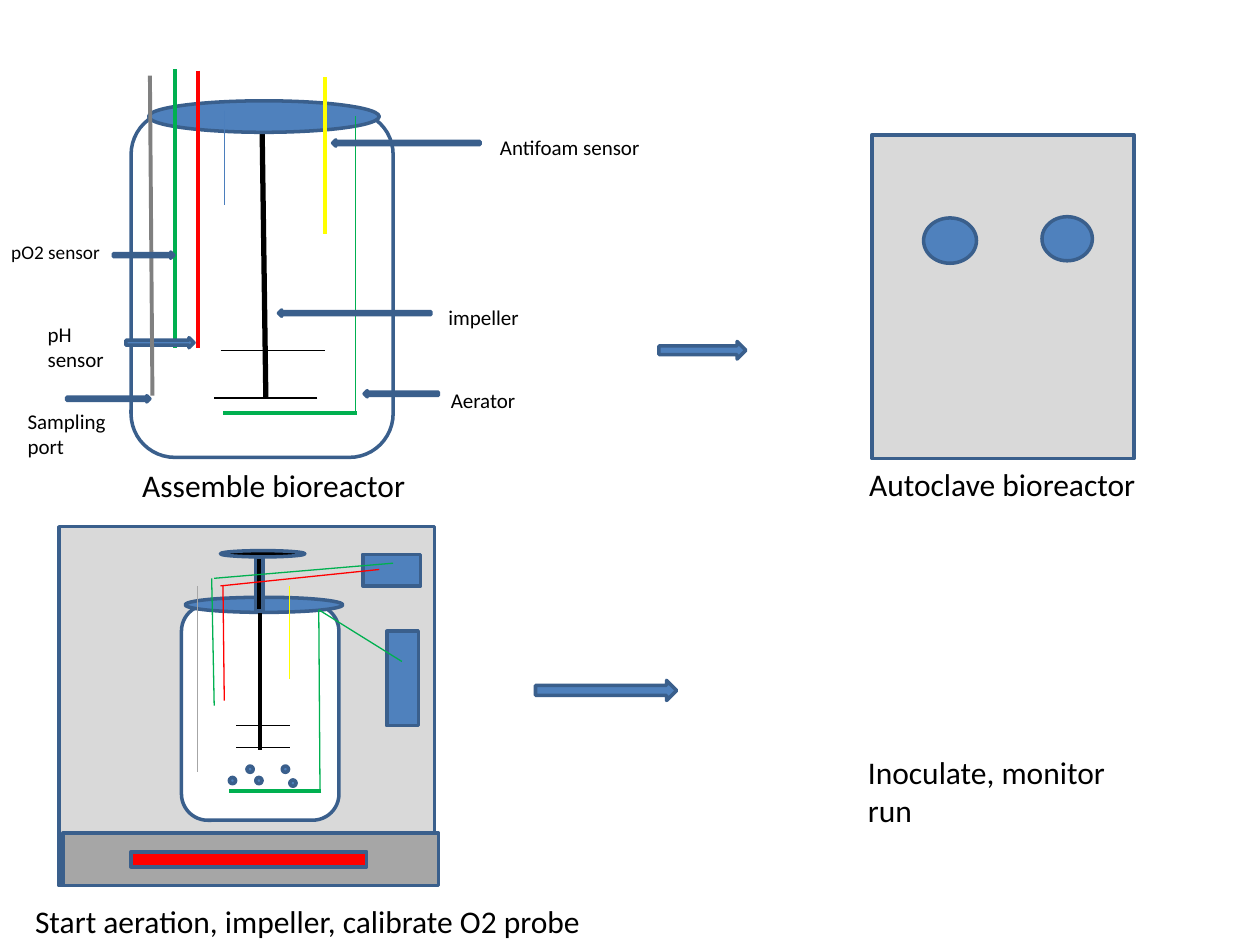
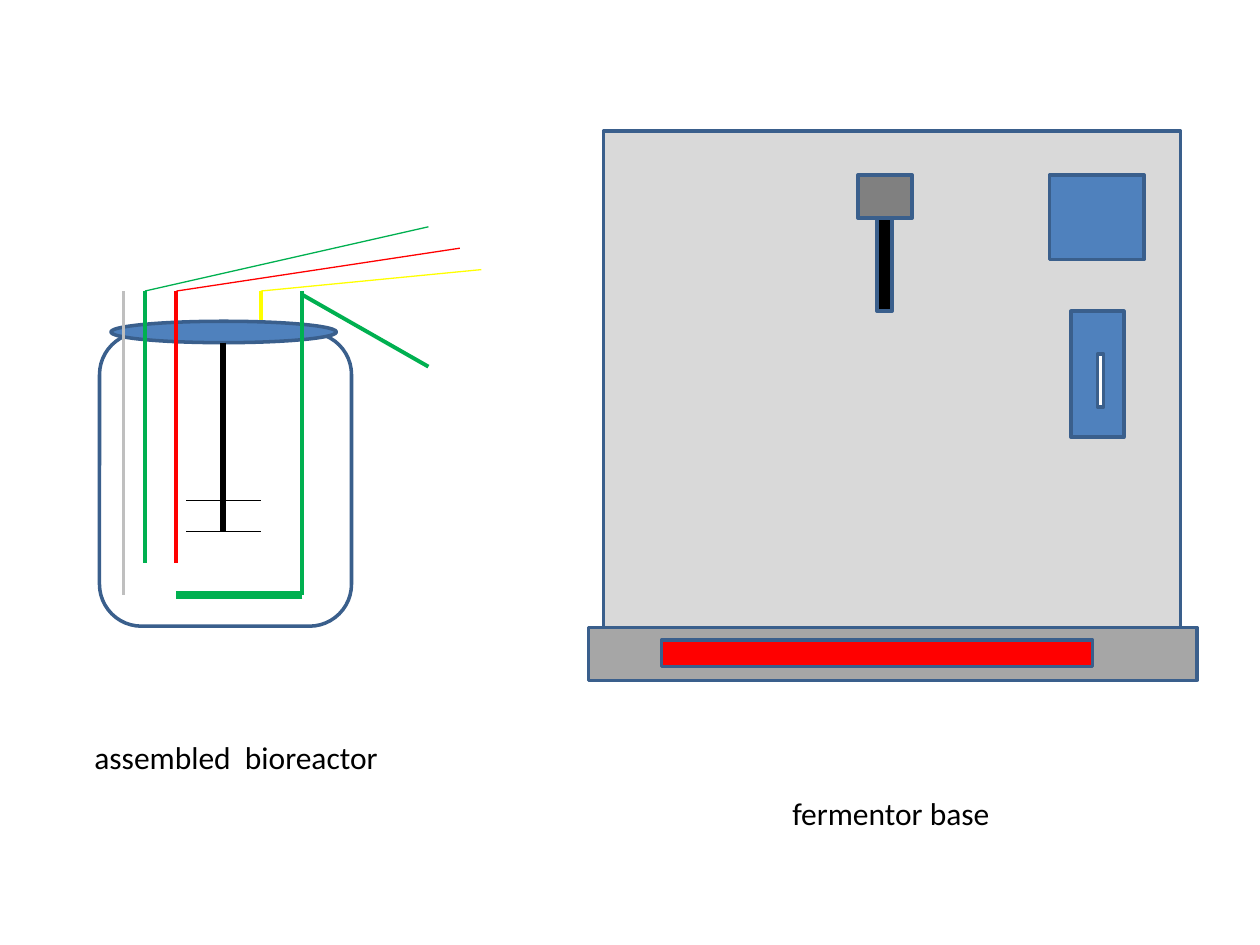
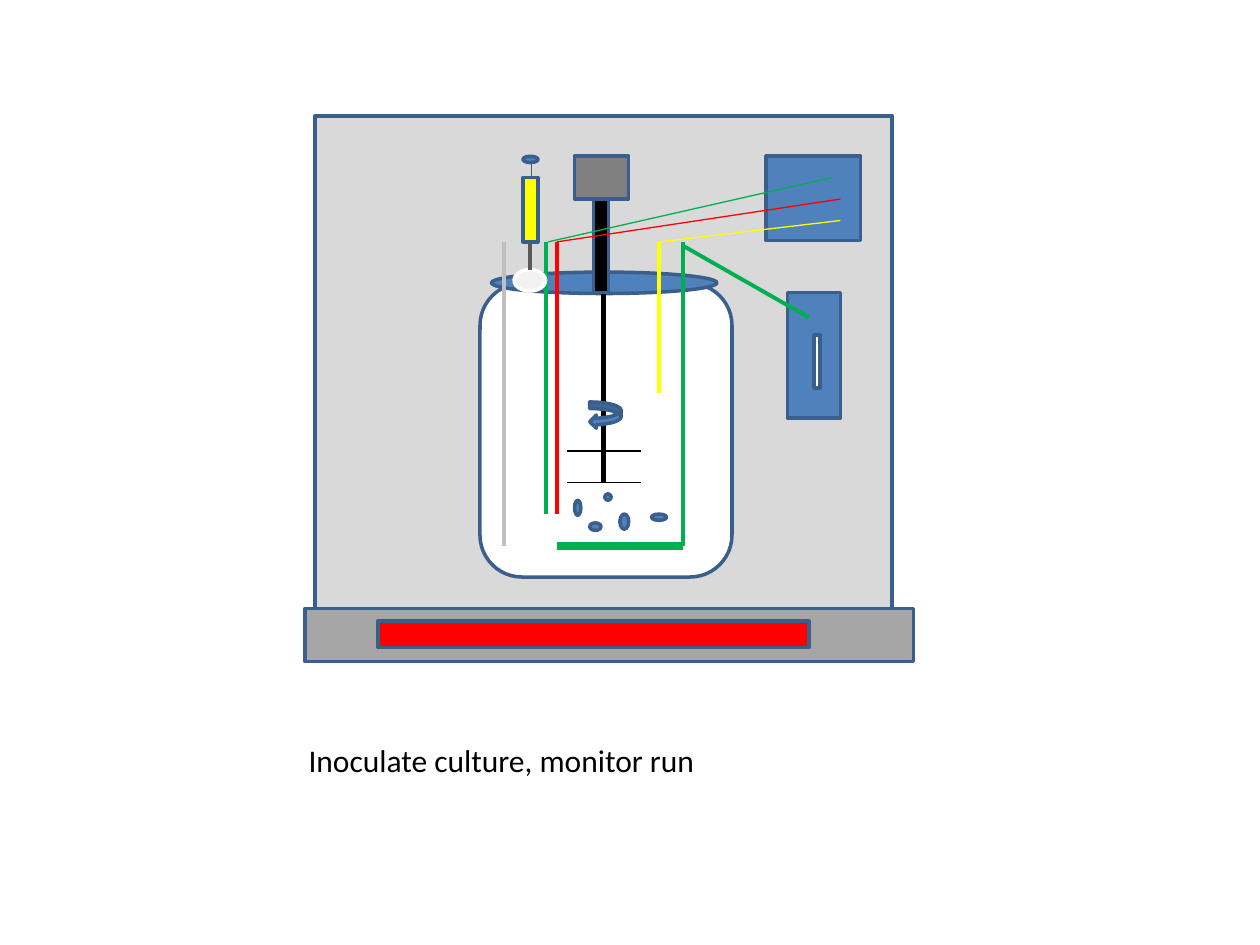
from lxml import etree
from pptx import Presentation
from pptx import util as u
from pptx.dml.color import RGBColor
from pptx.enum import shapes, text
from pptx.oxml import ns

BLACK = RGBColor(0x00, 0x00, 0x00)
WHITE = RGBColor(0xFF, 0xFF, 0xFF)
BLUE = RGBColor(0x4F, 0x81, 0xBD)
THIN_BLUE = RGBColor(0x4B, 0x7E, 0xBC)
OUTLINE = RGBColor(0x3A, 0x5F, 0x8C)
RED = RGBColor(0xFF, 0x00, 0x00)
GREEN = RGBColor(0x00, 0xB0, 0x50)
YELLOW = RGBColor(0xFF, 0xFF, 0x00)
PALE = RGBColor(0xF2, 0xF2, 0xF2)
PANEL = RGBColor(0xD9, 0xD9, 0xD9)
SILVER = RGBColor(0xBF, 0xBF, 0xBF)
PLINTH = RGBColor(0xA6, 0xA6, 0xA6)
GRAY = RGBColor(0x80, 0x80, 0x80)
DARK = RGBColor(0x59, 0x59, 0x59)
FONT = "Calibri"
THIN, MEDIUM, THICK, SPARGER = 0.75, 2.25, 3, 4.5

PRESETS = {
    "rect": shapes.MSO_SHAPE.RECTANGLE,
    "round": shapes.MSO_SHAPE.ROUNDED_RECTANGLE,
    "ellipse": shapes.MSO_SHAPE.OVAL,
    "arrow": shapes.MSO_SHAPE.RIGHT_ARROW,
    "back arrow": shapes.MSO_SHAPE.RIGHT_ARROW,
    "swirl": shapes.MSO_SHAPE.CURVED_LEFT_ARROW,
}

ASSEMBLY = [
    ("round", 1.04, 0.88, 2.08, 2.75, None),
    ("line", 2.08, 0.99, 2.11, 3.16, BLACK, THICK),
    ("line", 1.75, 2.78, 2.58, 2.78, BLACK, THIN),
    ("ellipse", 1.18, 0.8, 1.83, 0.25, BLUE),
    ("line", 2.58, 0.61, 2.58, 1.86, YELLOW, MEDIUM),
    ("line", 1.78, 0.88, 1.78, 1.63, THIN_BLUE, THIN),
    ("line", 2.82, 0.92, 2.82, 3.26, GREEN, THIN),
    ("line", 1.57, 0.56, 1.57, 2.76, RED, MEDIUM),
    ("line", 2.52, 3.16, 1.7, 3.16, BLACK, THIN),
    ("line", 1.39, 0.55, 1.39, 2.76, GREEN, MEDIUM),
    ("line", 2.83, 3.28, 1.77, 3.28, GREEN, MEDIUM),
    ("arrow", 1, 2.68, 0.54, 0.08, BLUE),
    ("back arrow", 2.21, 2.46, 1.21, 0.05, BLUE),
    ("back arrow", 2.64, 1.11, 1.17, 0.05, BLUE),
    ("back arrow", 2.89, 3.1, 0.59, 0.05, BLUE),
    ("line", 1.19, 0.6, 1.21, 3.14, GRAY, MEDIUM),
    ("arrow", 0.53, 3.14, 0.66, 0.05, BLUE),
    ("arrow", 0.9, 2, 0.48, 0.05, BLUE),
]
AUTOCLAVE = [
    ("arrow", 5.23, 2.71, 0.69, 0.14, BLUE),
    ("rect", 6.92, 1.07, 2.08, 2.57, PANEL),
    ("ellipse", 7.33, 1.73, 0.42, 0.36, BLUE),
    ("ellipse", 8.27, 1.72, 0.4, 0.35, BLUE),
]
SMALL_BUBBLES = [(1.82, 6.17), (2.03, 6.17), (2.3, 6.19), (2.24, 6.08), (1.96, 6.08)]
AERATION = [
    ("rect", 0.47, 4.18, 2.98, 2.85, PANEL),
    ("rect", 0.5, 6.61, 2.98, 0.42, PLINTH),
    ("rect", 1.04, 6.76, 1.87, 0.12, RED),
    ("rect", 2.88, 4.4, 0.46, 0.25, BLUE),
    ("rect", 3.07, 5.01, 0.25, 0.75, BLUE),
    ("round", 1.44, 4.8, 1.25, 1.71, WHITE),
    ("ellipse", 1.47, 4.74, 1.25, 0.12, BLUE),
    ("line", 2.53, 4.84, 2.54, 6.28, GREEN, THIN),
    ("line", 2.06, 4.86, 2.06, 5.95, BLACK, MEDIUM),
    ("line", 2.3, 5.93, 1.87, 5.93, BLACK, THIN),
    ("line", 2.55, 6.28, 1.82, 6.28, GREEN, MEDIUM),
    ("line", 2.3, 5.76, 1.87, 5.76, BLACK, THIN),
    ("line", 2.3, 4.65, 2.3, 5.39, YELLOW, THIN),
    ("ellipse", 1.75, 4.37, 0.67, 0.05, BLACK),
    ("rect", 2.03, 4.42, 0.06, 0.43, BLACK),
    *[("ellipse", left, top, 0.05, 0.05, BLUE) for left, top in SMALL_BUBBLES],
    ("line", 1.77, 4.65, 1.78, 5.56, RED, THIN),
    ("line", 1.68, 4.59, 1.7, 5.6, GREEN, THIN),
    ("line", 1.75, 4.65, 3.01, 4.52, RED, THIN),
    ("line", 1.7, 4.59, 3.12, 4.47, GREEN, THIN),
    ("line", 1.57, 4.65, 1.57, 6.13, PLINTH, THIN),
    ("line", 2.53, 4.84, 3.19, 5.25, GREEN, THIN),
    ("arrow", 4.25, 5.4, 1.12, 0.16, BLUE),
]

BASE = [
    ("rect", 4.67, 4.98, 4.83, 0.42, PLINTH),
    ("rect", 5.25, 5.08, 3.42, 0.21, RED),
    ("rect", 8.33, 1.39, 0.75, 0.67, BLUE),
    ("rect", 8.5, 2.47, 0.42, 1, BLUE),
    ("rect", 8.71, 2.81, 0.05, 0.42, WHITE),
]
MOTOR = [
    ("rect", 6.96, 1.72, 0.12, 0.75, BLACK),
    ("rect", 6.81, 1.39, 0.43, 0.34, GRAY),
]
VESSEL = [
    ("round", 0.79, 2.64, 2, 2.33, WHITE),
    ("ellipse", 0.88, 2.55, 1.79, 0.17, BLUE),
    ("line", 2.4, 2.31, 2.4, 4.72, GREEN, MEDIUM),
    ("line", 2.4, 4.72, 1.4, 4.72, GREEN, SPARGER),
    ("line", 1.77, 2.72, 1.77, 4.22, BLACK, THICK),
    ("line", 2.07, 4.22, 1.48, 4.22, BLACK, THIN),
    ("line", 2.07, 3.97, 1.48, 3.97, BLACK, THIN),
    ("line", 1.4, 2.31, 1.4, 4.47, RED, MEDIUM),
    ("line", 0.98, 2.31, 0.98, 4.72, SILVER, MEDIUM),
]
LEADS = [
    ("line", 2.4, 2.34, 3.4, 2.91, GREEN, MEDIUM),
    ("line", 1.4, 2.31, 3.65, 1.97, RED, THIN),
]
OXYGEN_PROBE = [("line", 1.15, 2.31, 1.15, 4.47, GREEN, MEDIUM)]
OXYGEN_LEAD = [("line", 1.15, 2.31, 3.4, 1.8, GREEN, THIN)]
ANTIFOAM_PROBE = [("line", 2.07, 2.31, 2.07, 3.51, YELLOW, MEDIUM)]

BUBBLES = [
    (5.17, 4.08, 0.12, 0.05), (4.92, 4.08, 0.07, 0.12), (4.68, 4.15, 0.09, 0.06),
    (4.8, 3.92, 0.05, 0.05), (4.56, 3.97, 0.05, 0.12),
]
INOCULATION = [
    *[("ellipse", *bubble, BLUE) for bubble in BUBBLES],
    ("ellipse", 4.08, 2.14, 0.25, 0.17, PALE, WHITE),
    ("line", 4.21, 2.14, 4.21, 1.75, DARK, MEDIUM),
    ("rect", 4.15, 1.41, 0.12, 0.51, YELLOW),
    ("line", 4.22, 1.41, 4.22, 1.24, DARK, THIN),
    ("ellipse", 4.15, 1.24, 0.12, 0.05, BLUE),
    ("line", 5.23, 1.92, 6.67, 1.75, YELLOW, THIN),
]

OVERVIEW_LABELS = [
    ("Assemble bioreactor", 1.03, 3.65, 2.42, 0.4, 18),
    ("pO2 sensor", -0.01, 1.86, 0.91, 0.29, 11, False),
    ("pH sensor", 0.28, 2.5, 0.73, 0.5, 12),
    ("impeller", 3.46, 2.37, 2.17, 0.3, 12),
    ("Antifoam sensor", 3.87, 1.02, 1.5, 0.3, 12),
    ("Aerator", 3.48, 3.03, 1.33, 0.3, 12),
    ("Sampling port", 0.12, 3.19, 0.88, 0.5, 12),
    ("Autoclave bioreactor", 6.79, 3.64, 2.33, 0.4, 18, True, text.PP_ALIGN.CENTER),
    ("Start aeration, impeller, calibrate O2 probe", 0.18, 7.11, 4.82, 0.4, 18),
    ("Inoculate, monitor run", 6.79, 5.93, 2.33, 0.71, 18),
]
PARTS_LABELS = [
    ("fermentor base", 6.19, 6.25, 1.78, 0.4, 18, False),
    ("assembled  bioreactor", 0.65, 5.81, 2.48, 0.4, 18, False),
]
RUN_LABELS = [("Inoculate culture, monitor run", 2.35, 5.83, 6.25, 0.42, 18)]


def shift(parts, across, down):
    moved = []
    for kind, x, y, x2, y2, *style in parts:
        if kind == "line":
            x2, y2 = x2 + across, y2 + down
        moved.append((kind, x + across, y + down, x2, y2, *style))
    return moved


def add_line(container, x1, y1, x2, y2, color, width):
    ends = [u.Inches(value) for value in (x1, y1, x2, y2)]
    line = container.add_connector(shapes.MSO_CONNECTOR.STRAIGHT, *ends)
    line.line.color.rgb = color
    line.line.width = u.Pt(width)
    etree.SubElement(line._element.spPr, ns.qn("a:effectLst"))


def add_solid(container, kind, left, top, width, height, fill, outline=OUTLINE):
    frame = [u.Inches(value) for value in (left, top, width, height)]
    shape = container.add_shape(PRESETS[kind], *frame)
    shape.shadow.inherit = False
    if fill is None:
        shape.fill.background()
    else:
        shape.fill.solid()
        shape.fill.fore_color.rgb = fill
    shape.line.color.rgb = outline
    shape.line.width = u.Pt(2)
    if kind == "back arrow":
        shape.rotation = 180


def draw(container, parts):
    for kind, *details in parts:
        if kind == "line":
            add_line(container, *details)
        else:
            add_solid(container, kind, *details)


def add_label(slide, words, left, top, width, height, size, wrap=True,
              alignment=text.PP_ALIGN.LEFT):
    frame = [u.Inches(value) for value in (left, top, width, height)]
    text_frame = slide.shapes.add_textbox(*frame).text_frame
    text_frame.word_wrap = wrap
    text_frame.auto_size = text.MSO_AUTO_SIZE.SHAPE_TO_FIT_TEXT
    paragraph = text_frame.paragraphs[0]
    paragraph.alignment = alignment
    run = paragraph.add_run()
    run.text = words
    run.font.name = FONT
    run.font.size = u.Pt(size)
    run.font.color.rgb = BLACK


def add_slide(presentation, labels):
    slide = presentation.slides.add_slide(presentation.slide_layouts[6])
    for label in labels:
        add_label(slide, *label)
    return slide


def add_overview(presentation):
    slide = add_slide(presentation, OVERVIEW_LABELS)
    draw(slide.shapes, ASSEMBLY + AUTOCLAVE + AERATION)


def add_parts(presentation):
    slide = add_slide(presentation, PARTS_LABELS)
    panel = [("rect", 4.79, 1.04, 4.58, 4.33, PANEL)]
    antifoam_lead = [("line", 2.07, 2.31, 3.82, 2.14, YELLOW, THIN)]
    draw(slide.shapes.add_group_shape().shapes, panel + BASE + MOTOR)
    draw(slide.shapes.add_group_shape().shapes,
         LEADS + OXYGEN_LEAD + ANTIFOAM_PROBE + VESSEL + OXYGEN_PROBE + antifoam_lead)


def add_run_stage(presentation):
    slide = add_slide(presentation, RUN_LABELS)
    base_offset, vessel_offset = (-2.25, -0.15), (3.02, -0.39)
    draw(slide.shapes, [("rect", 2.5, 0.92, 4.58, 4.33, PANEL)])
    draw(slide.shapes, shift(BASE, *base_offset))
    draw(slide.shapes, shift(VESSEL, *vessel_offset))
    draw(slide.shapes, shift(ANTIFOAM_PROBE, 3.16, -0.39))
    draw(slide.shapes, shift(OXYGEN_PROBE, 3.18, -0.39))
    draw(slide.shapes, [("swirl", 4.68, 3.19, 0.25, 0.21, BLUE)])
    draw(slide.shapes, shift(MOTOR, *base_offset))
    draw(slide.shapes, shift(LEADS, *vessel_offset))
    draw(slide.shapes, shift(OXYGEN_LEAD, 3.2, -0.39))
    draw(slide.shapes, INOCULATION)


def main():
    presentation = Presentation()
    presentation.slide_width = u.Inches(10)
    presentation.slide_height = u.Inches(7.5)
    add_overview(presentation)
    add_parts(presentation)
    add_run_stage(presentation)
    presentation.save("out.pptx")


if __name__ == "__main__":
    main()
